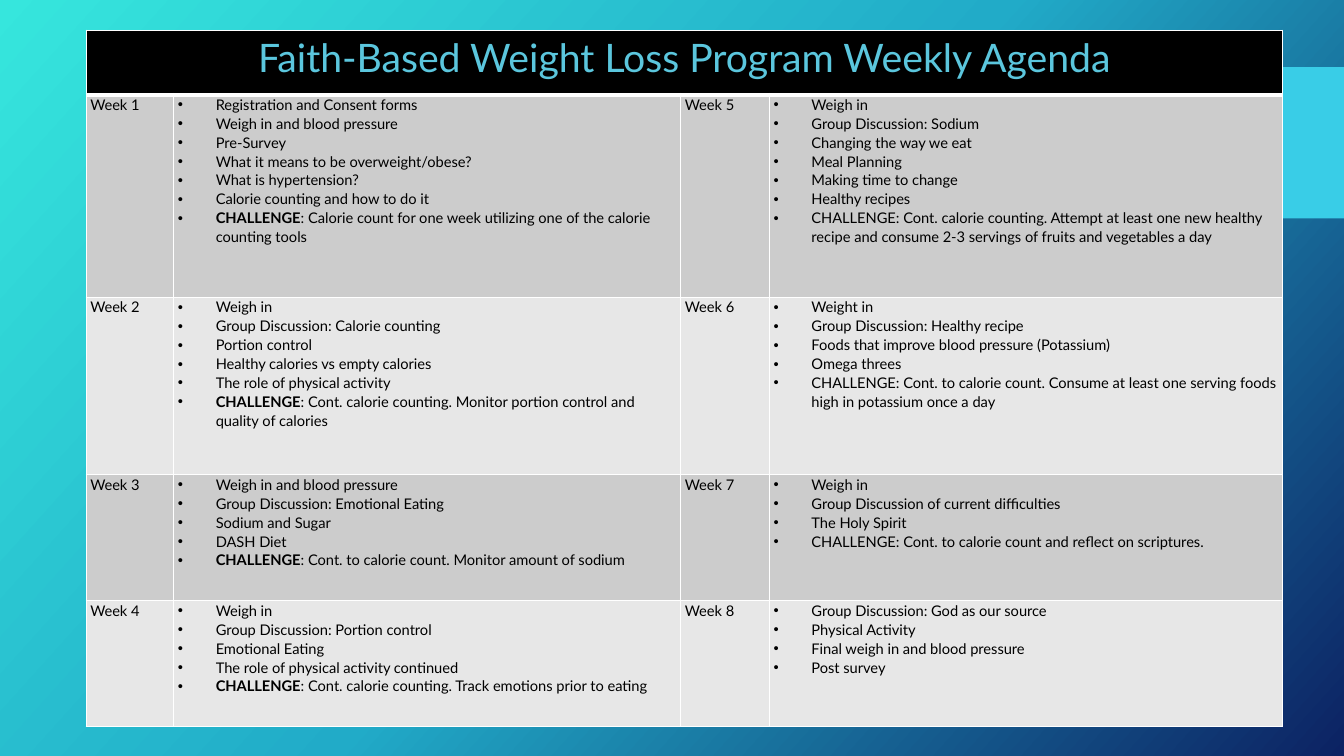
from lxml import etree
from pptx import Presentation
from pptx.dml.color import RGBColor
from pptx.enum.shapes import MSO_SHAPE
from pptx.enum.text import PP_ALIGN
from pptx.oxml.ns import qn
from pptx.util import Pt

RECTANGLE = MSO_SHAPE.RECTANGLE
LEFT, CENTER = PP_ALIGN.LEFT, PP_ALIGN.CENTER

BLACK = RGBColor(0x00, 0x00, 0x00)
WHITE = RGBColor(0xFF, 0xFF, 0xFF)
TITLE_BLUE = RGBColor(0x5B, 0xC6, 0xDD)
ACCENT = RGBColor(0x39, 0xCD, 0xE7)
ROW_FILLS = (RGBColor(0xCC, 0xCC, 0xCC), RGBColor(0xE7, 0xE7, 0xE7))
BACKDROP = (
    (0, RGBColor(0x36, 0xE6, 0xDD)),
    (50, RGBColor(0x21, 0xAB, 0xC8)),
    (100, RGBColor(0x0C, 0x22, 0x63)),
)
BACKDROP_ANGLE = 42

FONT = "Lato"
COLUMN_WIDTHS = (62.64, 362.16, 63.36, 366.48)
ROW_HEIGHTS = (46.08, 144.72, 126.72, 90, 90)
BULLET_INDENT, BULLET_TAB = Pt(27), Pt(36)

TITLE = "Faith-Based Weight Loss Program Weekly Agenda"
CHALLENGE = "CHALLENGE"
WEEKS = (
    ("Registration and Consent forms", "Weigh in and blood pressure", "Pre-Survey",
     "What it means to be overweight/obese?", "What is hypertension?",
     "Calorie counting and how to do it",
     "CHALLENGE: Calorie count for one week utilizing one of the calorie counting tools"),
    ("Weigh in", "Group Discussion: Calorie counting", "Portion control",
     "Healthy calories vs empty calories", "The role of physical activity",
     "CHALLENGE: Cont. calorie counting. Monitor portion control and quality of calories"),
    ("Weigh in and blood pressure", "Group Discussion: Emotional Eating",
     "Sodium and Sugar", "DASH Diet",
     "CHALLENGE: Cont. to calorie count. Monitor amount of sodium"),
    ("Weigh in", "Group Discussion: Portion control", "Emotional Eating",
     "The role of physical activity continued",
     "CHALLENGE: Cont. calorie counting. Track emotions prior to eating"),
    ("Weigh in", "Group Discussion: Sodium", "Changing the way we eat", "Meal Planning",
     "Making time to change", "Healthy recipes",
     "CHALLENGE: Cont. calorie counting. Attempt at least one new healthy recipe "
     "and consume 2-3 servings of fruits and vegetables a day"),
    ("Weight in", "Group Discussion: Healthy recipe",
     "Foods that improve blood pressure (Potassium)", "Omega threes",
     "CHALLENGE: Cont. to calorie count. Consume at least one serving foods "
     "high in potassium once a day"),
    ("Weigh in", "Group Discussion of current difficulties", "The Holy Spirit",
     "CHALLENGE: Cont. to calorie count and reflect on scriptures."),
    ("Group Discussion: God as our source", "Physical Activity",
     "Final weigh in and blood pressure", "Post survey"),
)
WEEKS_PER_COLUMN = 4


def paint_backdrop(slide):
    fill = slide.background.fill
    fill.gradient()
    fill.gradient_angle = 360 - BACKDROP_ANGLE
    stops = next(slide.element.iter(qn("a:gsLst")))
    for stop in list(stops):
        stops.remove(stop)
    for percent, color in BACKDROP:
        stop = etree.SubElement(stops, qn("a:gs"), pos=str(percent * 1000))
        etree.SubElement(stop, qn("a:srgbClr"), val=str(color))


def add_accent(slide):
    accent = slide.shapes.add_shape(RECTANGLE, Pt(834), Pt(48), Pt(126), Pt(108))
    accent.shadow.inherit = False
    accent.fill.solid()
    accent.fill.fore_color.rgb = ACCENT
    accent.line.fill.background()


def add_bullet(paragraph):
    properties = paragraph._p.get_or_add_pPr()
    properties.set("marL", str(BULLET_INDENT))
    properties.set("indent", str(-BULLET_INDENT))
    etree.SubElement(properties, qn("a:buFont"), typeface="Arial")
    etree.SubElement(properties, qn("a:buChar"), char="•")
    tabs = etree.SubElement(properties, qn("a:tabLst"))
    etree.SubElement(tabs, qn("a:tab"), pos=str(BULLET_TAB), algn="l")


def write_text(frame, lines, *, size=10.5, color=BLACK, align=LEFT,
               bulleted=False, bold_lead=""):
    for index, line in enumerate(lines):
        paragraph = frame.paragraphs[0] if index == 0 else frame.add_paragraph()
        if bulleted:
            add_bullet(paragraph)
        paragraph.alignment = align
        paragraph.line_spacing = 1.07
        lead = bold_lead if line.startswith(bold_lead) else ""
        for text, bold in ((lead, True), (line[len(lead):], False)):
            if text:
                run = paragraph.add_run()
                run.text = text
                run.font.name = FONT
                run.font.size = Pt(size)
                run.font.bold = bold
                run.font.color.rgb = color


def style_cell(cell, fill_color, bottom_width=1):
    cell.margin_left = cell.margin_right = Pt(3)
    cell.margin_top = cell.margin_bottom = 0
    cell.fill.solid()
    cell.fill.fore_color.rgb = fill_color
    properties = cell._tc.get_or_add_tcPr()
    # Borders come before the fill
    for index, side in enumerate("LRTB"):
        width = bottom_width if side == "B" else 1
        border = etree.Element(qn(f"a:ln{side}"), w=str(Pt(width)))
        solid = etree.SubElement(border, qn("a:solidFill"))
        etree.SubElement(solid, qn("a:srgbClr"), val=str(WHITE))
        properties.insert(index, border)


def add_agenda(slide):
    agenda = slide.shapes.add_table(
        len(ROW_HEIGHTS), len(COLUMN_WIDTHS), Pt(61.5), Pt(21.6),
        Pt(sum(COLUMN_WIDTHS)), Pt(sum(ROW_HEIGHTS))).table
    agenda.first_row = agenda.horz_banding = False
    for column, width in zip(agenda.columns, COLUMN_WIDTHS):
        column.width = Pt(width)
    for row, height in zip(agenda.rows, ROW_HEIGHTS):
        row.height = Pt(height)

    # Title row
    for cell in agenda.rows[0].cells:
        style_cell(cell, BLACK, bottom_width=3)
    title = agenda.cell(0, 0)
    title.merge(agenda.cell(0, len(COLUMN_WIDTHS) - 1))
    write_text(title.text_frame, [TITLE], size=28, color=TITLE_BLUE, align=CENTER)

    # Weeks run down the left half, then the right half
    for index, topics in enumerate(WEEKS):
        half, row = divmod(index, WEEKS_PER_COLUMN)
        week_cell = agenda.cell(row + 1, 2 * half)
        topic_cell = agenda.cell(row + 1, 2 * half + 1)
        for cell in (week_cell, topic_cell):
            style_cell(cell, ROW_FILLS[row % 2])
        write_text(week_cell.text_frame, [f"Week {index + 1}"])
        write_text(topic_cell.text_frame, topics, bulleted=True,
                   bold_lead=CHALLENGE if half == 0 else "")


def main():
    presentation = Presentation()
    presentation.slide_width, presentation.slide_height = Pt(960), Pt(540)
    slide = presentation.slides.add_slide(presentation.slide_layouts[6])
    paint_backdrop(slide)
    add_accent(slide)
    add_agenda(slide)
    presentation.save("out.pptx")


if __name__ == "__main__":
    main()
